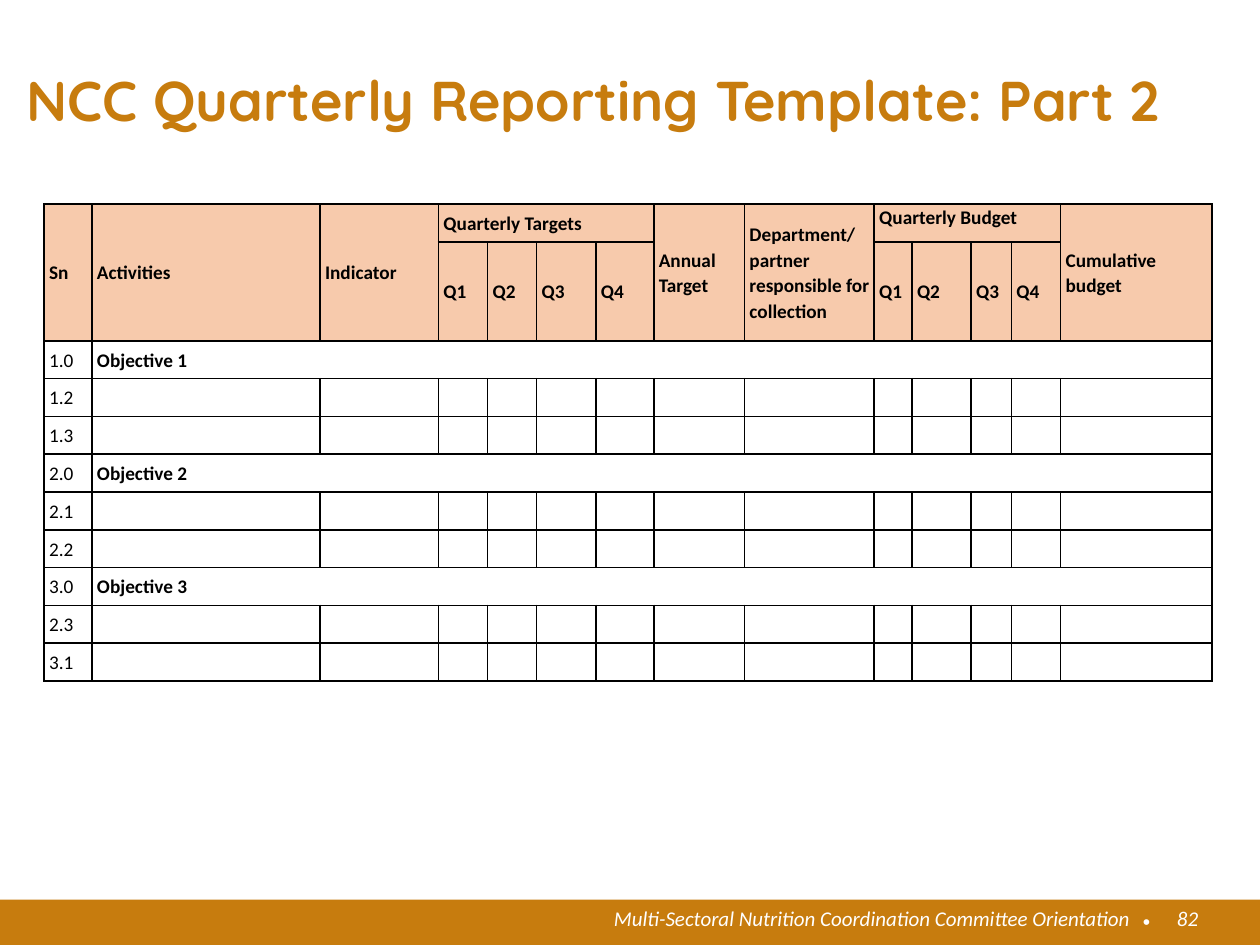
from dataclasses import dataclass

from lxml import etree
from pptx import Presentation
from pptx.dml.color import RGBColor
from pptx.enum import shapes, text
from pptx.oxml import ns
from pptx.util import Inches, Pt


@dataclass(frozen=True)
class Theme:
    accent: str = "C77C0E"
    header: str = "F7CAAC"
    ink: str = "000000"
    paper: str = "FFFFFF"
    title_font: str = "Quicksand"
    body_font: str = "Calibri"
    bullet_font: str = "Arial"
    title_size: int = 32
    table_size: int = 11
    footer_size: int = 12
    border: int = 1


THEME = Theme()

COLUMN_WIDTHS = [0.38, 1.81, 0.94, 0.39, 0.39, 0.47, 0.46,
                 0.72, 1.03, 0.3, 0.47, 0.32, 0.39, 1.2]
ROW_HEIGHT = 0.3
QUARTERS = ["Q1", "Q2", "Q3", "Q4"]

# Column index -> heading
TALL_HEADINGS = {
    0: "Sn",
    1: "Activities",
    2: "Indicator",
    7: "Annual Target",
    8: "Department/ partner responsible for collection",
    13: "Cumulative budget",
}
QUARTER_HEADINGS = {3: "Quarterly Targets", 9: "Quarterly Budget"}

# Serial number and objective; activity rows are left open
BODY_ROWS = [
    ("1.0", "Objective 1"), ("1.2", ""), ("1.3", ""),
    ("2.0", "Objective 2"), ("2.1", ""), ("2.2", ""),
    ("3.0", "Objective 3"), ("2.3", ""), ("3.1", ""),
]


def add_run(paragraph, words, font, size, color, bold=False, italic=False):
    run = paragraph.add_run()
    run.text = words
    run.font.name = font
    run.font.size = Pt(size)
    run.font.color.rgb = RGBColor.from_string(color)
    run.font.bold = bold
    run.font.italic = italic


def clear_margins(frame):
    frame.margin_left = frame.margin_right = 0
    frame.margin_top = frame.margin_bottom = 0


def add_title(slide, words):
    title = slide.shapes.title
    title.left, title.top = Inches(0.21), Inches(0.52)
    title.width, title.height = Inches(9.38), Inches(0.87)
    frame = title.text_frame
    clear_margins(frame)
    frame.word_wrap = False
    frame.auto_size = text.MSO_AUTO_SIZE.NONE
    frame.vertical_anchor = text.MSO_ANCHOR.TOP
    paragraph = frame.paragraphs[0]
    paragraph.alignment = text.PP_ALIGN.LEFT
    add_run(paragraph, words, THEME.title_font, THEME.title_size,
            THEME.accent, bold=True)


def add_footer_text(group, words, left, top, width, height,
                    font=THEME.body_font, italic=True,
                    alignment=text.PP_ALIGN.RIGHT):
    box = group.shapes.add_textbox(Inches(left), Inches(top),
                                   Inches(width), Inches(height))
    clear_margins(box.text_frame)
    box.text_frame.word_wrap = True
    paragraph = box.text_frame.paragraphs[0]
    paragraph.alignment = alignment
    add_run(paragraph, words, font, THEME.footer_size, THEME.paper,
            italic=italic)


def add_footer(slide):
    group = slide.shapes.add_group_shape()
    band = group.shapes.add_shape(shapes.MSO_SHAPE.RECTANGLE, 0, Inches(7.14),
                                  Inches(10), Inches(0.36))
    band.shadow.inherit = False
    band.fill.solid()
    band.fill.fore_color.rgb = RGBColor.from_string(THEME.accent)
    band.line.fill.background()
    add_footer_text(group, "82", 9.18, 7.19, 0.33, 0.32)
    add_footer_text(group,
                    "Multi-Sectoral Nutrition Coordination Committee Orientation",
                    4.84, 7.19, 4.13, 0.4)
    add_footer_text(group, "•", 9.07, 7.21, 0.18, 0.2, font=THEME.bullet_font,
                    italic=False, alignment=text.PP_ALIGN.LEFT)


def set_borders(cell):
    properties = cell._tc.get_or_add_tcPr()
    # Border lines come before the fill in the cell properties
    for index, side in enumerate(("lnL", "lnR", "lnT", "lnB")):
        line = etree.Element(ns.qn(f"a:{side}"), w=str(Pt(THEME.border)))
        fill = etree.SubElement(line, ns.qn("a:solidFill"))
        etree.SubElement(fill, ns.qn("a:srgbClr"), val=THEME.ink)
        properties.insert(index, line)


def format_cell(cell, is_header):
    cell.margin_left = Inches(0.04)
    cell.margin_right = cell.margin_top = cell.margin_bottom = 0
    cell.vertical_anchor = text.MSO_ANCHOR.MIDDLE
    if is_header:
        cell.fill.solid()
        cell.fill.fore_color.rgb = RGBColor.from_string(THEME.header)
    else:
        cell.fill.background()
    set_borders(cell)
    # Empty cells keep the table's type size, so rows stay low
    paragraph = cell.text_frame.paragraphs[0]
    etree.SubElement(paragraph._p, ns.qn("a:endParaRPr"),
                     sz=str(THEME.table_size * 100))


def write_cell(cell, words, bold=True):
    paragraph = cell.text_frame.paragraphs[0]
    paragraph.line_spacing = 1.07
    add_run(paragraph, words, THEME.body_font, THEME.table_size, THEME.ink,
            bold=bold)


def fill_header(table):
    for column, heading in TALL_HEADINGS.items():
        table.cell(0, column).merge(table.cell(1, column))
        write_cell(table.cell(0, column), heading)
    for first, heading in QUARTER_HEADINGS.items():
        table.cell(0, first).merge(table.cell(0, first + len(QUARTERS) - 1))
        write_cell(table.cell(0, first), heading)
        for offset, quarter in enumerate(QUARTERS):
            write_cell(table.cell(1, first + offset), quarter)
    table.cell(0, 9).vertical_anchor = text.MSO_ANCHOR.TOP


def fill_body(table):
    last = len(COLUMN_WIDTHS) - 1
    for row, (number, objective) in enumerate(BODY_ROWS, start=2):
        write_cell(table.cell(row, 0), number, bold=False)
        if objective:
            table.cell(row, 1).merge(table.cell(row, last))
            write_cell(table.cell(row, 1), objective)


def add_report_table(slide):
    row_count = len(BODY_ROWS) + 2
    table = slide.shapes.add_table(
        row_count, len(COLUMN_WIDTHS), Inches(0.35), Inches(1.62),
        Inches(9.3), Inches(ROW_HEIGHT * row_count)).table
    table.first_row = table.horz_banding = False
    for column, width in zip(table.columns, COLUMN_WIDTHS):
        column.width = Inches(width)
    for index, row in enumerate(table.rows):
        row.height = Inches(ROW_HEIGHT)
        for cell in row.cells:
            format_cell(cell, is_header=index < 2)
    fill_header(table)
    fill_body(table)


def main():
    presentation = Presentation()
    presentation.slide_width = Inches(10)
    presentation.slide_height = Inches(7.5)
    slide = presentation.slides.add_slide(presentation.slide_layouts[5])
    add_title(slide, "NCC Quarterly Reporting Template: Part 2")
    add_footer(slide)
    add_report_table(slide)
    presentation.save("out.pptx")


if __name__ == "__main__":
    main()
